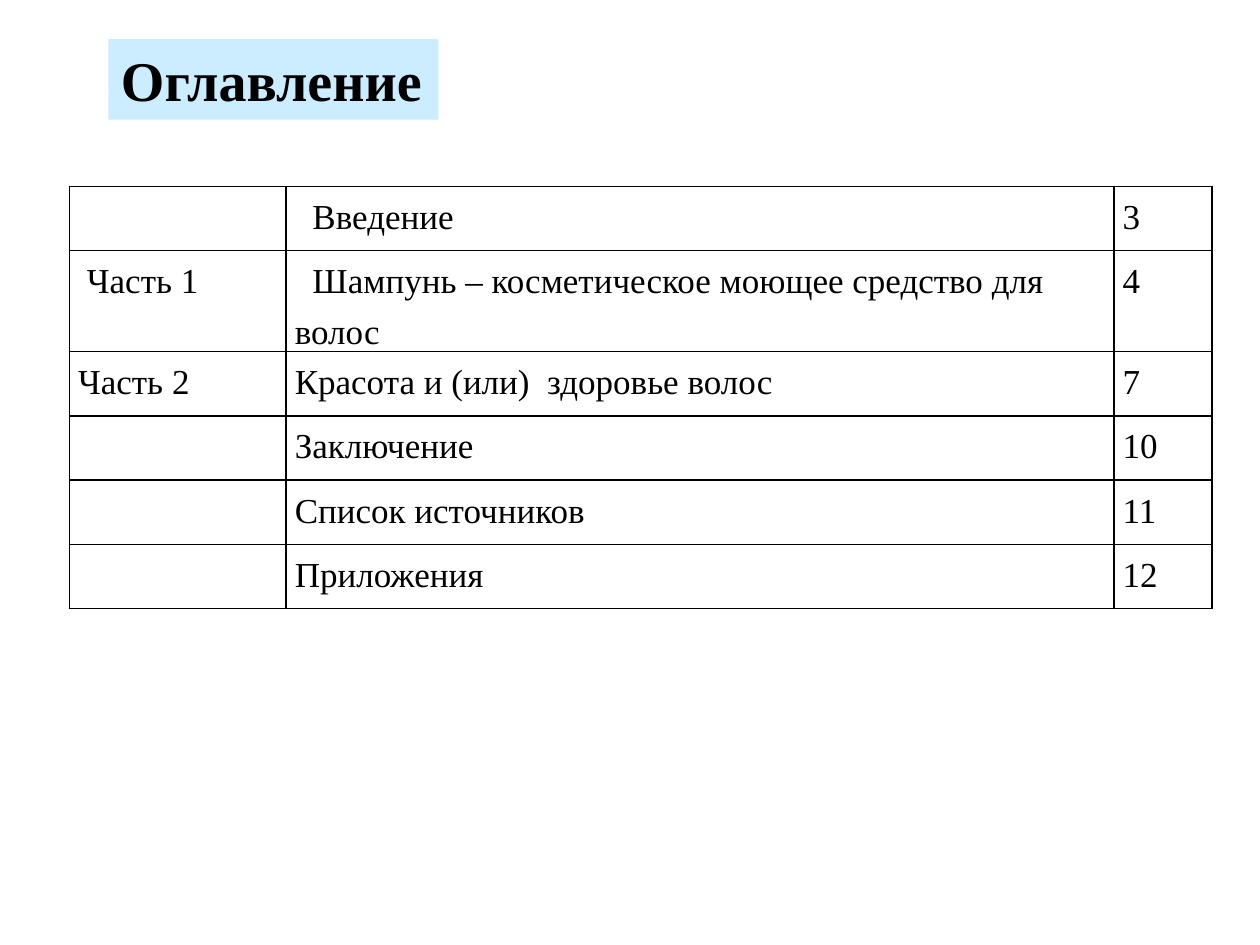
from dataclasses import dataclass

from lxml.etree import SubElement
from pptx import Presentation
from pptx.dml.color import RGBColor
from pptx.enum.text import MSO_ANCHOR, MSO_AUTO_SIZE, PP_ALIGN
from pptx.oxml.ns import qn
from pptx.util import Inches, Pt


@dataclass(frozen=True)
class Theme:
    """Colours, font and sizes of the slide."""
    font: str = "Times New Roman"
    ink: str = "000000"
    title_fill: str = "CCECFF"
    title_size: int = 32
    body_size: int = 20
    border_width: int = 1


def write_text(frame, text, *, theme, size, bold=False, spacing=1.0, indent=0):
    """Write one left-aligned paragraph into a text frame."""
    paragraph = frame.paragraphs[0]
    paragraph.alignment = PP_ALIGN.LEFT
    paragraph.line_spacing = spacing
    paragraph.font.size = Pt(size)
    if indent:
        paragraph._p.get_or_add_pPr().set("indent", str(Inches(indent)))
    if text:
        run = paragraph.add_run()
        run.text = text
        run.font.name = theme.font
        run.font.size = Pt(size)
        run.font.bold = bold
        run.font.color.rgb = RGBColor.from_string(theme.ink)


class SlideBuilder:
    """Hold the theme and the current slide."""

    def __init__(self, slide, theme):
        """Keep the slide and its theme."""
        self.slide = slide
        self.theme = theme

    def add_title(self, text, left, top, width, height):
        """Place and fill the title placeholder."""
        title = self.slide.shapes.title
        title.left, title.top = Inches(left), Inches(top)
        title.width, title.height = Inches(width), Inches(height)
        title.fill.solid()
        title.fill.fore_color.rgb = RGBColor.from_string(self.theme.title_fill)
        frame = title.text_frame
        frame.word_wrap = False
        frame.auto_size = MSO_AUTO_SIZE.NONE
        frame.vertical_anchor = MSO_ANCHOR.TOP
        write_text(frame, text, theme=self.theme, size=self.theme.title_size, bold=True)

    def add_borders(self, cell):
        """Draw a solid line on each side of a cell."""
        properties = cell._tc.get_or_add_tcPr()
        for side in ("lnL", "lnR", "lnT", "lnB"):
            line = SubElement(properties, qn(f"a:{side}"), w=str(Pt(self.theme.border_width)))
            fill = SubElement(line, qn("a:solidFill"))
            SubElement(fill, qn("a:srgbClr"), val=self.theme.ink)

    def add_contents(self, entries, left, top, height, widths, row_height):
        """Add the table of contents, with each entry's first-line indents."""
        frame = self.slide.shapes.add_table(
            len(entries), len(widths), Inches(left), Inches(top),
            Inches(sum(widths)), Inches(height))
        table = frame.table
        table.first_row = table.horz_banding = False
        for column, width in zip(table.columns, widths):
            column.width = Inches(width)
        for row, (texts, indents) in zip(table.rows, entries):
            row.height = Inches(row_height)
            for cell, text, indent in zip(row.cells, texts, indents):
                cell.margin_left = cell.margin_right = Inches(0.07)
                cell.margin_top = cell.margin_bottom = 0
                self.add_borders(cell)
                cell.fill.background()
                write_text(cell.text_frame, text, theme=self.theme,
                           size=self.theme.body_size, spacing=1.3, indent=indent)
        frame.height = Inches(height)


def main():
    """Build and save the contents slide."""
    presentation = Presentation()
    presentation.slide_width, presentation.slide_height = Inches(10), Inches(7.5)
    slide = presentation.slides.add_slide(presentation.slide_layouts.get_by_name("Title Only"))
    builder = SlideBuilder(slide, Theme())

    flush = (0, 0, 0)
    entries = [
        (("", "Введение", "3"), (0, 0.14, 0)),
        (("Часть 1", "Шампунь – косметическое моющее средство для волос", "4"), (0.07, 0.14, 0)),
        (("Часть 2", "Красота и (или)  здоровье волос", "7"), flush),
        (("", "Заключение", "10"), flush),
        (("", "Список источников", "11"), flush),
        (("", "Приложения", "12"), flush),
    ]
    builder.add_contents(entries, 0.55, 1.48, 3.4, (1.72, 6.57, 0.78), 0.51)
    builder.add_title("Оглавление", 0.86, 0.31, 2.62, 0.64)
    presentation.save("out.pptx")


if __name__ == "__main__":
    main()
